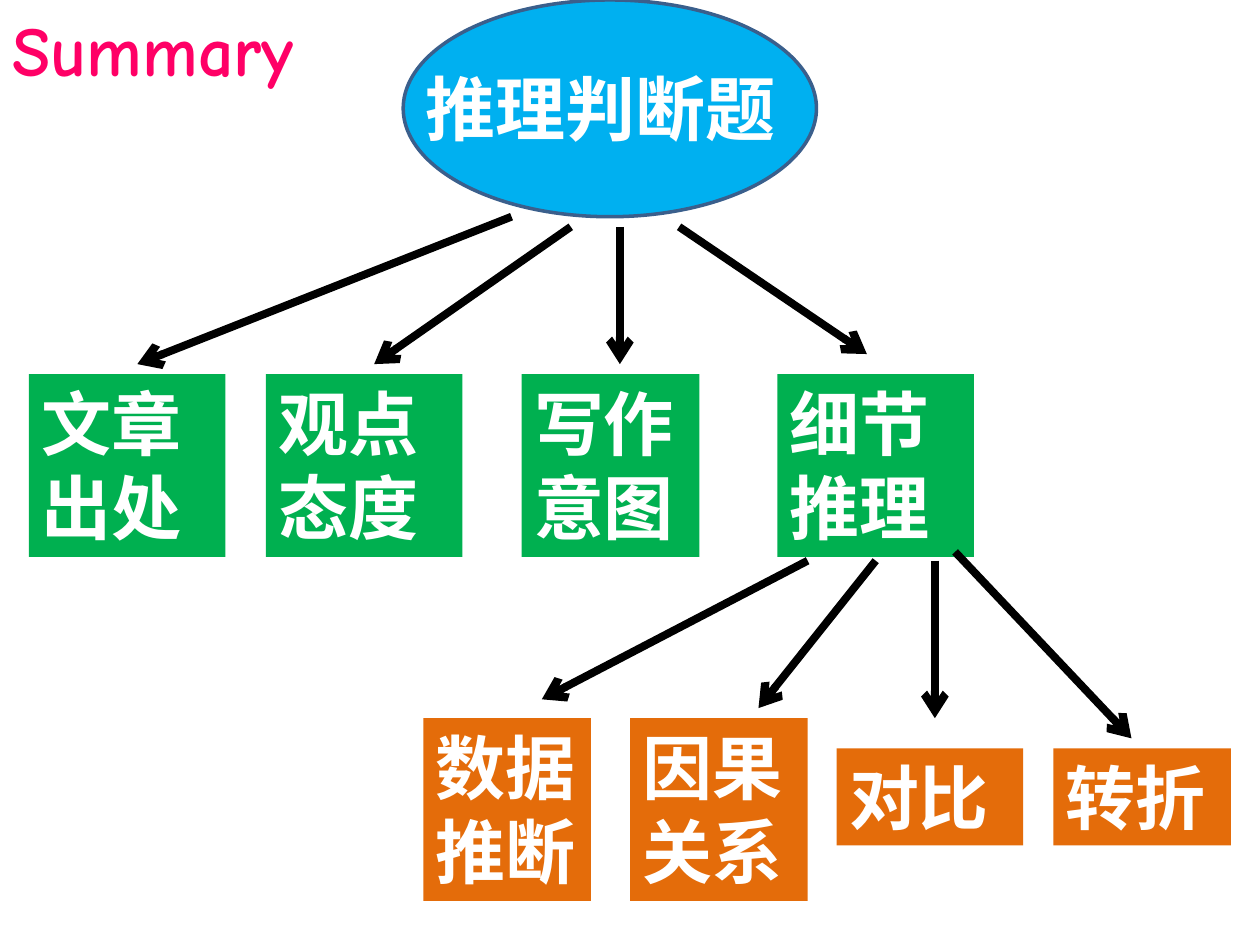
from pptx import Presentation
from pptx.dml.color import RGBColor
from pptx.enum.shapes import MSO_CONNECTOR, MSO_SHAPE
from pptx.enum.text import MSO_ANCHOR, MSO_AUTO_SIZE, PP_ALIGN
from pptx.oxml.ns import qn
from pptx.util import Inches, Pt
from lxml import etree

RECT, OVAL = MSO_SHAPE.RECTANGLE, MSO_SHAPE.OVAL
LINE = MSO_CONNECTOR.STRAIGHT
LEFT, TOP, FIXED = PP_ALIGN.LEFT, MSO_ANCHOR.TOP, MSO_AUTO_SIZE.NONE

# Content
TITLE = "Summary"
ROOT = "推理判断题"
COLORS = {"pink": "FF0066", "blue": "00B0F0", "navy": "3A5F8C", "green": "00B050",
          "orange": "E46C0A", "white": "FFFFFF", "black": "000000"}
BODY, HEAD = "Times New Roman", "Comic Neue"
ONE, TWO = 0.77, 1.45  # height of one and two lines of text

# Each level: colour, then boxes as (text, left, width, top, height)
LEVELS = [
    ("green", [("文章出处", 0.23, 1.56, 2.97, TWO),
               ("观点态度", 2.11, 1.56, 2.97, TWO),
               ("写作意图", 4.14, 1.41, 2.97, TWO),
               ("细节推理", 6.17, 1.56, 2.97, TWO)]),
    ("orange", [("数据推断", 3.36, 1.33, 5.7, TWO),
                ("因果关系", 5, 1.41, 5.7, TWO),
                ("对比", 6.64, 1.48, 5.94, ONE),
                ("转折", 8.36, 1.41, 5.94, ONE)]),
]
# Arrows as (x, y) to (x, y), fanning out from each parent
ARROWS = [
    (4.06, 1.72, 1.09, 2.89), (4.53, 1.8, 2.97, 2.89),
    (4.92, 1.8, 4.92, 2.89), (5.39, 1.8, 6.88, 2.81),
    (6.41, 4.45, 4.3, 5.55), (6.95, 4.45, 6.02, 5.62),
    (7.42, 4.45, 7.42, 5.7), (7.58, 4.38, 8.98, 5.86),
]


def rgb(name):
    return RGBColor.from_string(COLORS[name])


def write(shape, text, font=BODY, color="white"):
    frame = shape.text_frame
    frame.text = text
    frame.word_wrap = True
    frame.auto_size = FIXED
    frame.vertical_anchor = TOP
    para = frame.paragraphs[0]
    para.alignment = LEFT
    face = para.runs[0].font
    face.name, face.size, face.bold = font, Pt(40), True
    face.color.rgb = rgb(color)


def add_box(kind, place, fill):
    shape = slide.shapes.add_shape(kind, *map(Inches, place))
    shape.shadow.inherit = False
    shape.fill.solid()
    shape.fill.fore_color.rgb = rgb(fill)
    shape.line.fill.background()
    return shape


def add_arrow(ends):
    line = slide.shapes.add_connector(LINE, *map(Inches, ends))
    line.line.width = Pt(4.5)
    line.line.color.rgb = rgb("black")
    etree.SubElement(line.line._get_or_add_ln(), qn("a:tailEnd"), type="arrow")
    etree.SubElement(line._element.spPr, qn("a:effectLst"))


deck = Presentation()
deck.slide_width, deck.slide_height = Inches(10), Inches(7.5)
slide = deck.slides.add_slide(deck.slide_layouts[5])

# Title
title = slide.shapes.title
title.left, title.top, title.width, title.height = map(Inches, (0, 0, 4.06, ONE))
write(title, TITLE, HEAD, "pink")

# Root topic
oval = add_box(OVAL, (3.2, 0, 3.28, 1.72), "blue")
oval.line.color.rgb = rgb("navy")
oval.line.width = Pt(2)
label = slide.shapes.add_textbox(*map(Inches, (3.28, 0.47, 3.12, ONE)))
write(label, ROOT)

# Topic boxes
for color, boxes in LEVELS:
    for text, left, width, top, height in boxes:
        write(add_box(RECT, (left, top, width, height), color), text)

# Arrows
for ends in ARROWS:
    add_arrow(ends)

deck.save("out.pptx")
